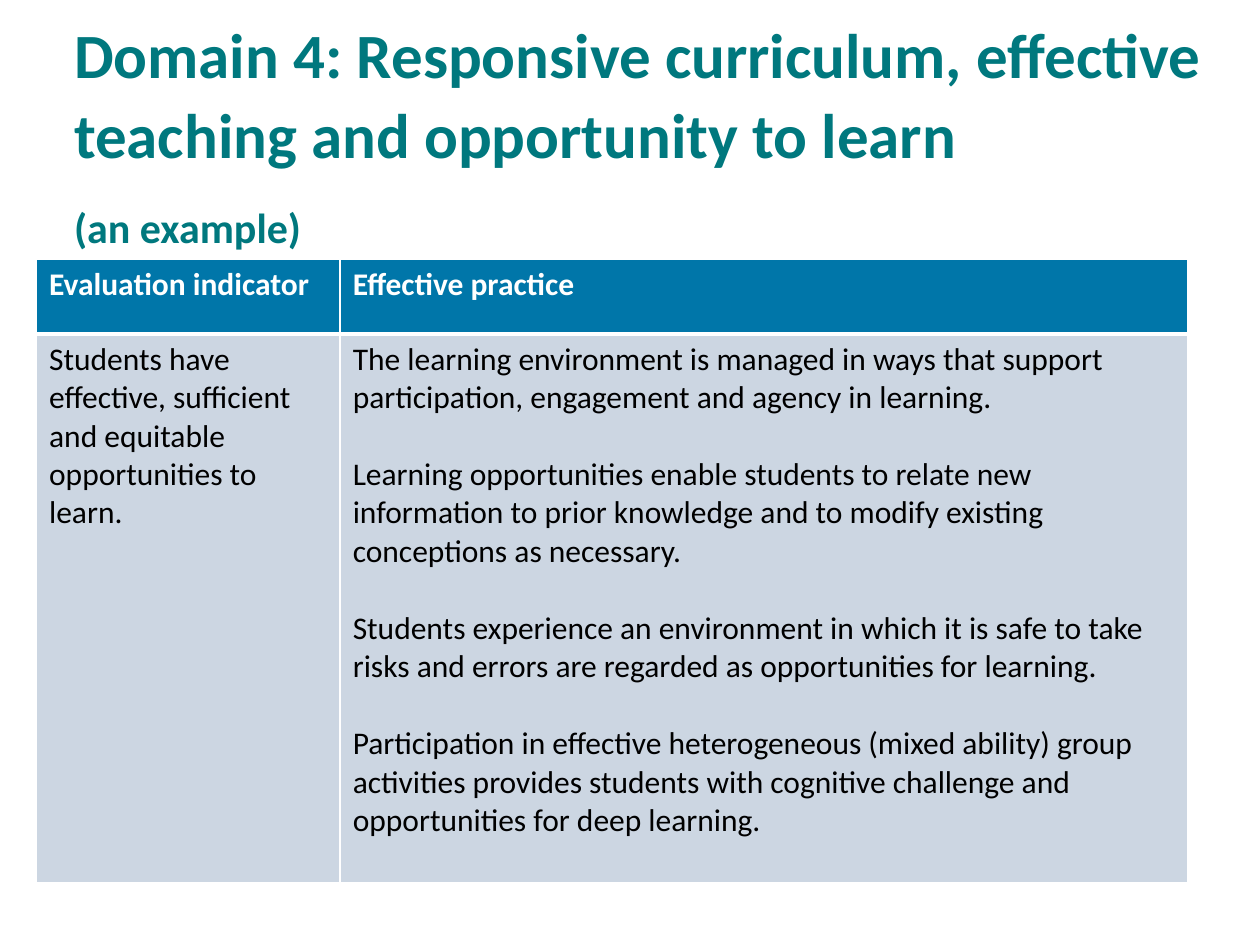
from lxml import etree
from pptx import Presentation
from pptx.dml.color import RGBColor
from pptx.enum.text import MSO_ANCHOR
from pptx.oxml.ns import qn
from pptx.util import Inches, Pt

MIDDLE = MSO_ANCHOR.MIDDLE
TOP = MSO_ANCHOR.TOP
FONT = "Calibri"
TEAL, BLUE, PALE = "00787E", "0076A9", "CCD6E2"
WHITE, BLACK = "FFFFFF", "000000"

TITLE = "Domain 4: Responsive curriculum, effective teaching and opportunity to learn"
HEADS = ["Evaluation indicator", "Effective practice"]
INDICATOR = ["Students have effective, sufficient and equitable opportunities to learn."]
PRACTICE = [
    "The learning environment is managed in ways that support participation, "
    "engagement and agency in learning.",
    "Learning opportunities enable students to relate new information to prior "
    "knowledge and to modify existing conceptions as necessary.",
    "Students experience an environment in which it is safe to take risks and "
    "errors are regarded as opportunities for learning.",
    "Participation in effective heterogeneous (mixed ability) group activities "
    "provides students with cognitive challenge and opportunities for deep learning.",
]


def color(code):
    return RGBColor.from_string(code)


def write(para, text, size=18, ink=BLACK, bold=False):
    run = para.add_run()
    run.text = text
    font = run.font
    font.name, font.size, font.bold = FONT, Pt(size), bold
    font.color.rgb = color(ink)


def border(cell, sides):
    """Draw white cell borders; sides maps L, R, T, B to points."""
    props = cell._tc.get_or_add_tcPr()
    for side, width in sides.items():
        line = etree.SubElement(props, qn(f"a:ln{side}"), w=str(Pt(width)))
        fill = etree.SubElement(line, qn("a:solidFill"))
        etree.SubElement(fill, qn("a:srgbClr"), val=WHITE)


class Deck:
    def __init__(self):
        self.prs = Presentation()
        self.prs.slide_width, self.prs.slide_height = Inches(10), Inches(7.5)
        self.slide = self.prs.slides.add_slide(self.prs.slide_layouts[6])

    def title(self, box, text, note):
        frame = self.slide.shapes.add_textbox(*map(Inches, box)).text_frame
        frame.word_wrap = True
        frame.vertical_anchor = MIDDLE
        para = frame.paragraphs[0]
        para.line_spacing = Pt(46)
        write(para, text, size=36, ink=TEAL, bold=True)
        para.add_line_break()
        write(para, note, size=24, ink=TEAL, bold=True)

    def cell(self, cell, texts, fill, sides, **style):
        border(cell, sides)
        cell.fill.solid()
        cell.fill.fore_color.rgb = color(fill)
        cell.vertical_anchor = TOP
        frame = cell.text_frame
        for i, text in enumerate(texts):
            para = frame.add_paragraph() if i else frame.paragraphs[0]
            if i:
                para.space_before = Pt(22)
            write(para, text, **style)

    def table(self, left, top, widths, heights, heads, body):
        table = self.slide.shapes.add_table(
            2, len(widths), Inches(left), Inches(top),
            Inches(sum(widths)), Inches(sum(heights))).table
        for col, width in zip(table.columns, widths):
            col.width = Inches(width)
        for row, height in zip(table.rows, heights):
            row.height = Inches(height)
        for i, (head, texts) in enumerate(zip(heads, body)):
            self.cell(table.cell(0, i), [head], BLUE,
                      dict(L=1, R=1, T=1, B=3), ink=WHITE, bold=True)
            self.cell(table.cell(1, i), texts, PALE, dict(L=1, R=1, T=3, B=1))


def main():
    deck = Deck()
    deck.title((0.49, 0.1, 9.22, 1.88), TITLE, "(an example)")
    deck.table(0.29, 2.06, [2.41, 6.73], [0.59, 4.36], HEADS, [INDICATOR, PRACTICE])
    deck.prs.save("out.pptx")


if __name__ == "__main__":
    main()
